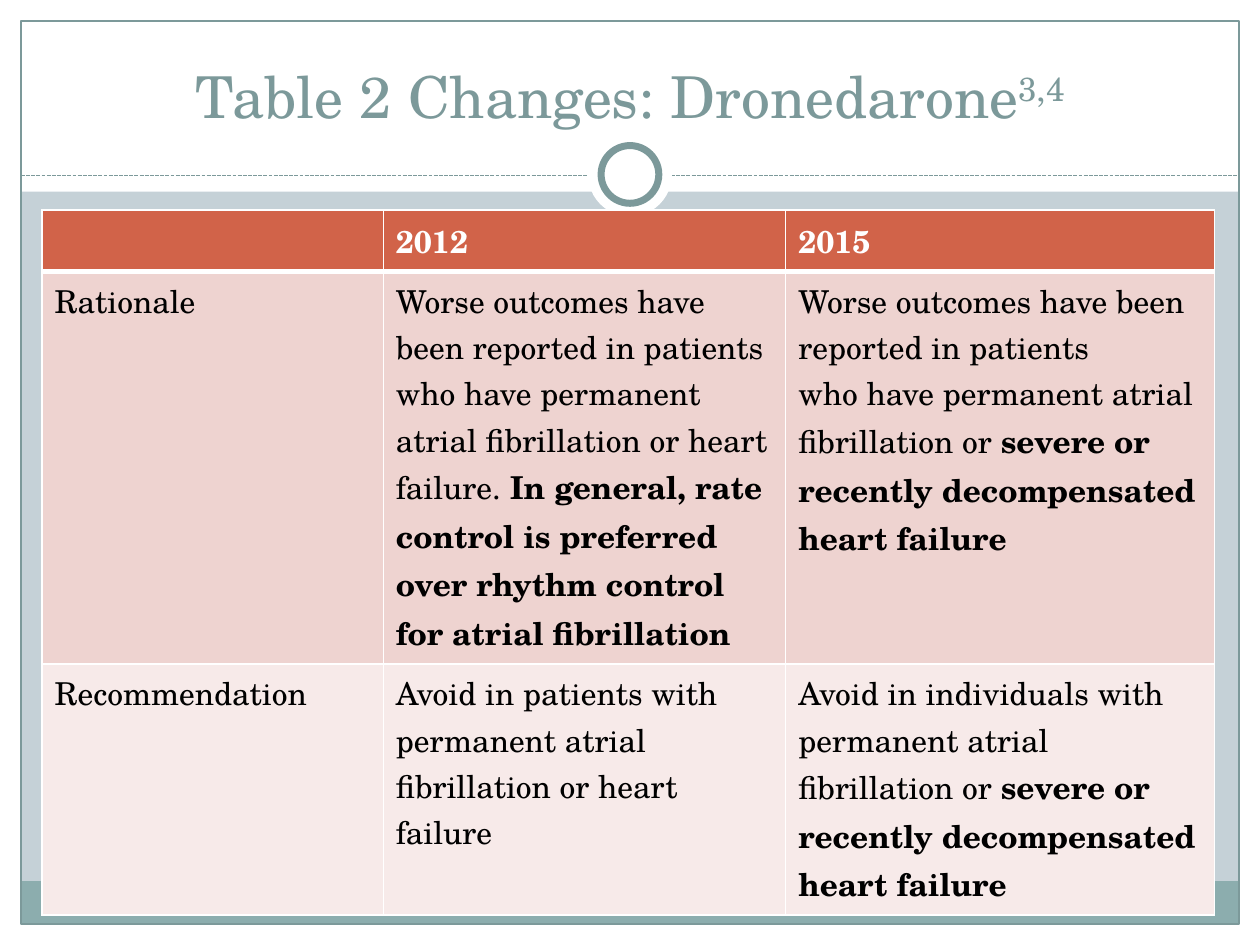
from dataclasses import dataclass

from lxml.etree import SubElement
from pptx import Presentation
from pptx.dml.color import RGBColor
from pptx.enum.dml import MSO_LINE
from pptx.enum.shapes import MSO_CONNECTOR, MSO_SHAPE
from pptx.enum.text import MSO_ANCHOR, PP_ALIGN
from pptx.oxml.ns import qn
from pptx.util import Pt


@dataclass(frozen=True)
class Theme:
    """Build a medication-guideline comparison slide in one set of colours and sizes."""
    font: str = "TeX Gyre Schola"
    background: str = "C5D1D7"
    white: str = "FFFFFF"
    black: str = "000000"
    accent: str = "7C999A"
    footer: str = "8CADAE"
    header: str = "D16349"
    bands: tuple = ("EED3D0", "F7EAE9")
    title_size: int = 33
    table_size: int = 18


THEME = Theme()
WIDTH, HEIGHT, EDGE = 720, 540, 12
RULE_Y = 100.5
RING_Y = 99.7

COLUMNS = (195, 230, 245)
ROW_HEIGHTS = (35, 224, 143)
ROWS = (
    ([], [("", "2012")], [("", "2015")]),
    (
        [("Rationale", "")],
        [
            ("Worse outcomes have been reported in patients who have permanent", ""),
            ("atrial fibrillation or heart failure. ",
             "In general, rate control is preferred"),
            ("", "over rhythm control for atrial fibrillation"),
        ],
        [
            ("Worse outcomes have been reported in patients", ""),
            ("who have permanent atrial fibrillation or ",
             "severe or recently decompensated"),
            ("", "heart failure"),
        ],
    ),
    (
        [("Recommendation", "")],
        [
            ("Avoid in patients with", ""),
            ("permanent atrial", ""),
            ("fibrillation or heart", ""),
            ("failure", ""),
        ],
        [
            ("Avoid in individuals with permanent atrial", ""),
            ("fibrillation or ", "severe or recently decompensated heart failure"),
        ],
    ),
)


def rgb(value):
    return RGBColor.from_string(value)


def add_run(p, text, size, color, bold=False):
    r = p.add_run()
    r.text = text
    r.font.name = THEME.font
    r.font.size = Pt(size)
    r.font.bold = bold
    r.font.color.rgb = rgb(color)
    return r


def add_shape(s, kind, box, fill=None, line=None, weight=0.75):
    sp = s.shapes.add_shape(kind, *map(Pt, box))
    sp.shadow.inherit = False
    if fill:
        sp.fill.solid()
        sp.fill.fore_color.rgb = rgb(fill)
    else:
        sp.fill.background()
    if line:
        sp.line.color.rgb = rgb(line)
        sp.line.width = Pt(weight)
    else:
        sp.line.fill.background()


def add_circle(s, size, **style):
    box = (WIDTH / 2 - size / 2, RING_Y - size / 2, size, size)
    add_shape(s, MSO_SHAPE.OVAL, box, THEME.white, **style)


def add_rule(s):
    ends = (EDGE, RULE_Y, WIDTH - EDGE, RULE_Y)
    rule = s.shapes.add_connector(MSO_CONNECTOR.STRAIGHT, *map(Pt, ends))
    rule.line.color.rgb = rgb(THEME.accent)
    rule.line.width = Pt(0.75)
    rule.line.dash_style = MSO_LINE.SQUARE_DOT
    SubElement(rule._element.spPr, qn("a:effectLst"))


def add_frame(s):
    inner_w, inner_h = WIDTH - 2 * EDGE, HEIGHT - 2 * EDGE
    margins = (
        (0, HEIGHT - EDGE, WIDTH, EDGE),
        (0, 0, WIDTH, 109.5),
        (0, 0, EDGE, HEIGHT),
        (WIDTH - EDGE, 0, EDGE, HEIGHT),
    )
    for box in margins:
        add_shape(s, MSO_SHAPE.RECTANGLE, box, THEME.white)
    add_shape(s, MSO_SHAPE.RECTANGLE, (EDGE, 503.5, inner_w, 24.5), THEME.footer)
    add_shape(s, MSO_SHAPE.RECTANGLE, (EDGE, EDGE, inner_w, inner_h), line=THEME.accent)
    add_rule(s)
    add_circle(s, 48)
    add_circle(s, 33, line=THEME.accent, weight=4)


def set_title(s, text, superscript):
    title = s.shapes.title
    s.shapes._spTree.append(title._element)
    title.left, title.top, title.width, title.height = map(Pt, (24, 18, 672, 60))
    tf = title.text_frame
    tf.word_wrap = True
    tf.vertical_anchor = MSO_ANCHOR.BOTTOM
    p = tf.paragraphs[0]
    p.alignment = PP_ALIGN.CENTER
    add_run(p, text, THEME.title_size, THEME.accent)
    r = add_run(p, superscript, THEME.title_size, THEME.accent)
    r._r.get_or_add_rPr().set("baseline", "30000")


def set_borders(cell, bottom):
    tc_pr = cell._tc.get_or_add_tcPr()
    for i, (side, weight) in enumerate(zip("LRTB", (1, 1, 1, bottom))):
        ln = tc_pr.makeelement(qn(f"a:ln{side}"), {"w": str(Pt(weight))})
        fill = SubElement(ln, qn("a:solidFill"))
        SubElement(fill, qn("a:srgbClr"), val=THEME.white)
        tc_pr.insert(i, ln)


def fill_cell(cell, paragraphs, fill, color, bottom):
    cell.fill.solid()
    cell.fill.fore_color.rgb = rgb(fill)
    set_borders(cell, bottom)
    tf = cell.text_frame
    for i, parts in enumerate(paragraphs):
        p = tf.add_paragraph() if i else tf.paragraphs[0]
        for text, bold in zip(parts, (False, True)):
            if text:
                add_run(p, text, THEME.table_size, color, bold)


def add_comparison(s):
    box = (24, 120, sum(COLUMNS), sum(ROW_HEIGHTS))
    table = s.shapes.add_table(len(ROWS), len(COLUMNS), *map(Pt, box)).table
    for column, width in zip(table.columns, COLUMNS):
        column.width = Pt(width)
    for i, (cells, height) in enumerate(zip(ROWS, ROW_HEIGHTS)):
        table.rows[i].height = Pt(height)
        fill = THEME.bands[i - 1] if i else THEME.header
        color = THEME.black if i else THEME.white
        for j, paragraphs in enumerate(cells):
            fill_cell(table.cell(i, j), paragraphs, fill, color, 1 if i else 3)


def main():
    prs = Presentation()
    prs.slide_width, prs.slide_height = Pt(WIDTH), Pt(HEIGHT)
    s = prs.slides.add_slide(prs.slide_layouts[5])
    s.background.fill.solid()
    s.background.fill.fore_color.rgb = rgb(THEME.background)
    add_frame(s)
    set_title(s, "Table 2 Changes: Dronedarone", "3,4")
    add_comparison(s)
    prs.save("out.pptx")


if __name__ == "__main__":
    main()
